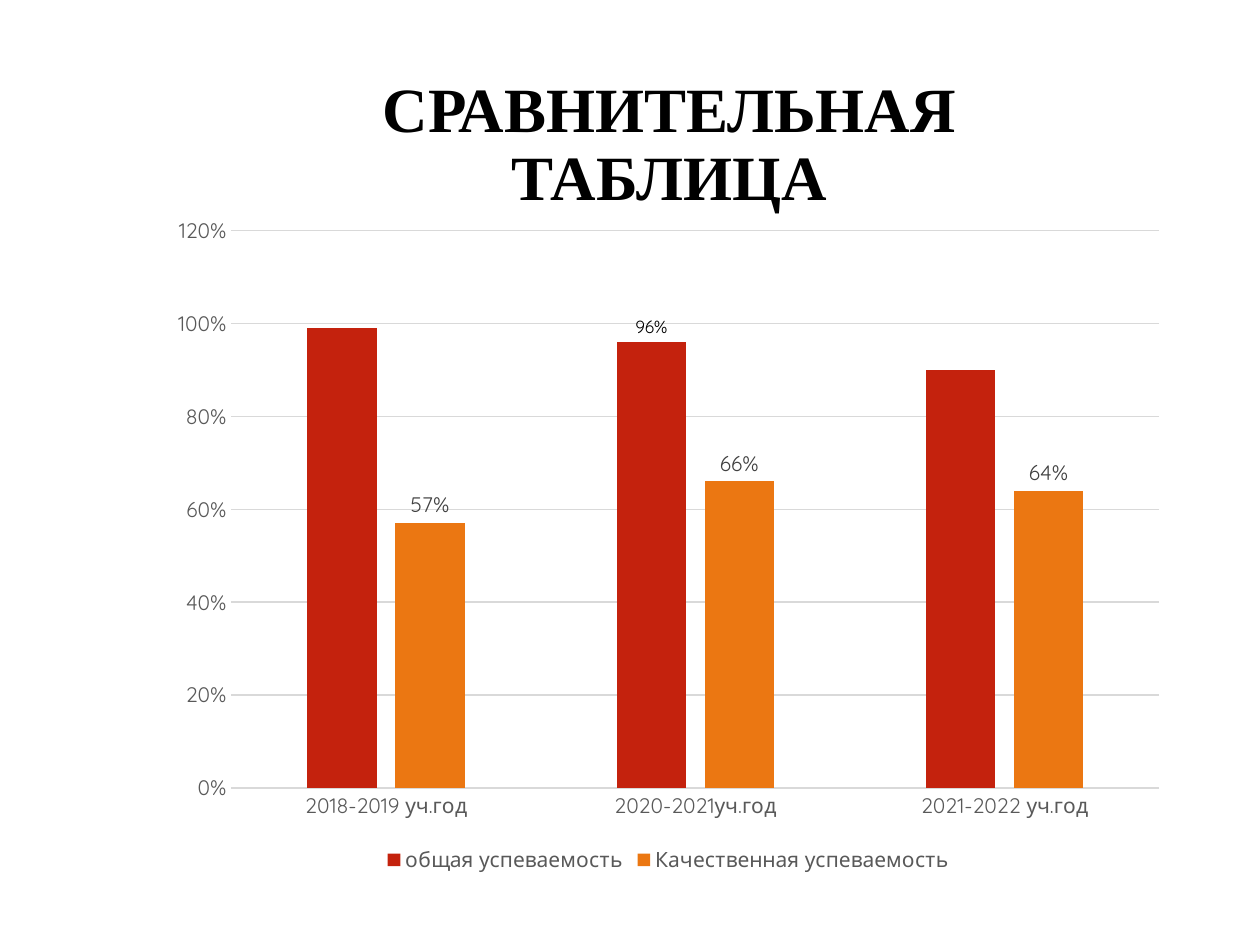
from pptx import Presentation
from pptx.chart.data import CategoryChartData
from pptx.dml.color import RGBColor
from pptx.enum.chart import XL_CHART_TYPE, XL_LABEL_POSITION, XL_LEGEND_POSITION, XL_TICK_MARK
from pptx.enum.text import MSO_ANCHOR, MSO_AUTO_SIZE, PP_ALIGN
from pptx.util import Cm, Pt

TITLE = "СРАВНИТЕЛЬНАЯ ТАБЛИЦА"
YEARS = ["2018-2019 уч.год", "2020-2021уч.год", "2021-2022 уч.год"]
RESULTS = [
    ("общая успеваемость", [0.99, 0.96, 0.9], "overall"),
    ("Качественная успеваемость", [0.57, 0.66, 0.64], "quality"),
]
COLOURS = {
    "overall": "C4220D",
    "quality": "EB7712",
    "title": "000000",
    "axis": "595959",
    "label": "404040",
    "grid": "D9D9D9",
}
CHART_FONT = "Quicksand"
PERCENT = "0%"


def colour(name):
    return RGBColor.from_string(COLOURS[name])


def style_font(font, size, tone, face=CHART_FONT, bold=False):
    font.name = face
    font.size = Pt(size)
    font.bold = bold
    font.color.rgb = colour(tone)


def write_text(box, text, size, tone, face, bold, align, spacing):
    frame = box.text_frame
    frame.word_wrap = True
    frame.auto_size = MSO_AUTO_SIZE.NONE
    frame.vertical_anchor = MSO_ANCHOR.MIDDLE
    para = frame.paragraphs[0]
    para.alignment = align
    para.line_spacing = spacing
    span = para.add_run()
    span.text = text
    style_font(span.font, size, tone, face, bold)


def draw_line(line, tone):
    line.color.rgb = colour(tone)
    line.width = Pt(0.75)


def add_results_chart(page):
    data = CategoryChartData(number_format=PERCENT)
    data.categories = YEARS
    for name, values, tone in RESULTS:
        data.add_series(name, values)
    chart = page.shapes.add_chart(
        XL_CHART_TYPE.COLUMN_CLUSTERED, Cm(3.18), Cm(4.11), Cm(20.6), Cm(13.59), data
    ).chart
    style_font(chart.font, 10, "title")
    chart.has_title = False
    chart.has_legend = True
    chart.legend.position = XL_LEGEND_POSITION.BOTTOM
    chart.legend.include_in_layout = False
    style_font(chart.legend.font, 12, "axis")

    for axis in (chart.category_axis, chart.value_axis):
        axis.major_tick_mark = axis.minor_tick_mark = XL_TICK_MARK.NONE
        style_font(axis.tick_labels.font, 12, "axis")
    draw_line(chart.category_axis.format.line, "grid")
    scale = chart.value_axis
    scale.minimum_scale, scale.maximum_scale, scale.major_unit = 0, 1.2, 0.2
    scale.tick_labels.number_format = PERCENT
    scale.tick_labels.number_format_is_linked = False
    scale.format.line.fill.background()
    draw_line(scale.major_gridlines.format.line, "grid")

    plot = chart.plots[0]
    plot.vary_by_categories = False
    plot.gap_width, plot.overlap = 219, -27
    for series, (name, values, tone) in zip(plot.series, RESULTS):
        series.format.fill.solid()
        series.format.fill.fore_color.rgb = colour(tone)
        series.invert_if_negative = False

    overall, quality = plot.series
    overall.data_labels.show_value = False
    overall.points[1].data_label.position = XL_LABEL_POSITION.OUTSIDE_END
    labels = quality.data_labels
    labels.show_value = True
    labels.position = XL_LABEL_POSITION.OUTSIDE_END
    labels.number_format = PERCENT
    labels.number_format_is_linked = False
    style_font(labels.font, 12, "label")


def main():
    deck = Presentation()
    deck.slide_width, deck.slide_height = Cm(25.4), Cm(19.05)
    page = deck.slides.add_slide(deck.slide_layouts[5])
    title = page.shapes.title
    title.left, title.top, title.width, title.height = Cm(4.34), Cm(1.73), Cm(18.31), Cm(2.44)
    write_text(title, TITLE, size=36, tone="title", face="Times New Roman",
               bold=True, align=PP_ALIGN.CENTER, spacing=0.9)
    add_results_chart(page)
    deck.save("out.pptx")


if __name__ == "__main__":
    main()
